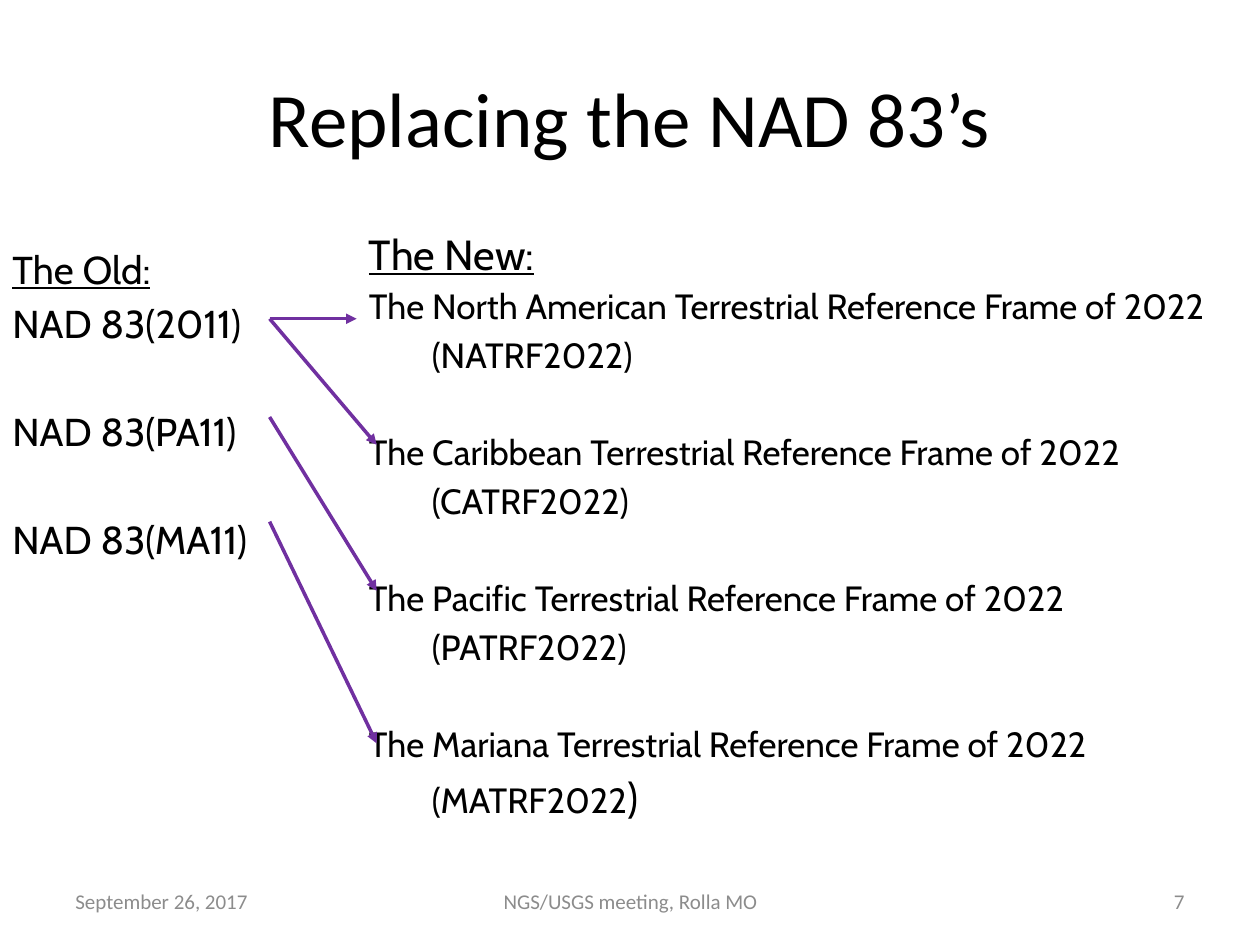
"""Build the slide that maps the old NAD 83 frames to the new 2022 frames."""
from pptx import Presentation
from pptx.dml.color import RGBColor as Color
from pptx.enum.shapes import MSO_CONNECTOR as Connector
from pptx.enum.text import MSO_ANCHOR as Anchor, PP_ALIGN as Align
from pptx.oxml.ns import qn
from pptx.util import Inches, Pt
from lxml.etree import SubElement

THEME = {
    "text": Color.from_string("000000"),
    "footer": Color.from_string("8C8C8C"),
    "arrow": Color.from_string("7030A0"),
    "body_font": "Cabin",
    "plain_font": "Calibri",
    "title_size": 44,
    "new_heading_size": 24,
    "old_size": 22.2,
    "new_size": 20,
    "footer_size": 12,
    "arrow_width": 2,
    "space_share": 0.185,
    "line_share": 1.4,
}

presentation = Presentation()
presentation.slide_width, presentation.slide_height = Inches(10), Inches(7.5)
column = presentation.slide_width / 100
row = presentation.slide_height / 100
slide = presentation.slides.add_slide(presentation.slide_layouts[5])


def grid(*lengths):
    """Turn alternating columns and rows into slide lengths."""
    return [round(length * (row if index % 2 else column)) for index, length in enumerate(lengths)]


def write(paragraph, text, size, font=THEME["body_font"], color=THEME["text"], underline=False):
    """Add a formatted run to a paragraph."""
    run = paragraph.add_run()
    run.text = text
    run.font.color.rgb = color
    for name, value in {"size": Pt(size), "name": font, "underline": underline}.items():
        setattr(run.font, name, value)


title = slide.shapes.title
for name, value in zip(("left", "top", "width", "height"), grid(5, 4, 90, 16.67)):
    setattr(title, name, value)
title.text_frame.vertical_anchor = Anchor.MIDDLE
title_paragraph = title.text_frame.paragraphs[0]
title_paragraph.alignment = Align.CENTER
write(title_paragraph, "Replacing the NAD 83’s", THEME["title_size"], THEME["plain_font"])

old_frames = [[f"NAD 83({name})"] for name in ("2011", "PA11", "MA11")]
new_frames = [
    [f"The {region} Terrestrial Reference Frame of 2022", f"\t({code}TRF2022"]
    for region, code in (("North American", "NA"), ("Caribbean", "CA"), ("Pacific", "PA"), ("Mariana", "MA"))
]
lists = [
    ("The Old:", THEME["old_size"], THEME["old_size"], old_frames, (0, 25.33, 29.9, 34.4)),
    ("The New:", THEME["new_heading_size"], THEME["new_size"], new_frames, (28.3, 23.47, 69.2, 70)),
]
for heading, heading_size, size, frames, place in lists:
    text_frame = slide.shapes.add_textbox(*grid(*place)).text_frame
    text_frame.word_wrap = True
    write(text_frame.paragraphs[0], heading, heading_size, underline=True)
    for frame_index, lines in enumerate(frames):
        for line_index, line in enumerate(lines):
            paragraph = text_frame.add_paragraph()
            starts_group = frame_index > 0 and line_index == 0
            gap = THEME["space_share"] + (THEME["line_share"] if starts_group else 0)
            paragraph.space_before = Pt(round(size * gap, 2))
            write(paragraph, line, size)
            if line.startswith("\t"):
                is_last = frame_index == len(frames) - 1
                write(paragraph, ")", heading_size if is_last else size)

arrows = [
    (21.4, 33.73, 28.3, 33.73),
    (21.4, 33.73, 29.9, 47.07),
    (21.4, 44.13, 29.9, 62.53),
    (21.4, 55.2, 29.9, 78.67),
]
for ends in arrows:
    arrow = slide.shapes.add_connector(Connector.STRAIGHT, *grid(*ends))
    arrow.line.color.rgb = THEME["arrow"]
    arrow.line.width = Pt(THEME["arrow_width"])
    properties = arrow.line._get_or_add_ln()
    SubElement(properties, qn("a:tailEnd"), type="triangle")
    SubElement(properties.getparent(), qn("a:effectLst"))

footers = [
    ("September 26, 2017", Align.LEFT, 5, 23.3),
    ("NGS/USGS meeting, Rolla MO", Align.CENTER, 34.2, 31.7),
    ("7", Align.RIGHT, 71.7, 23.3),
]
for text, alignment, left, width in footers:
    text_frame = slide.shapes.add_textbox(*grid(left, 92.67, width, 5.33)).text_frame
    for name, value in {"word_wrap": True, "vertical_anchor": Anchor.MIDDLE}.items():
        setattr(text_frame, name, value)
    text_frame.paragraphs[0].alignment = alignment
    write(text_frame.paragraphs[0], text, THEME["footer_size"], THEME["plain_font"], THEME["footer"])

presentation.save("out.pptx")
